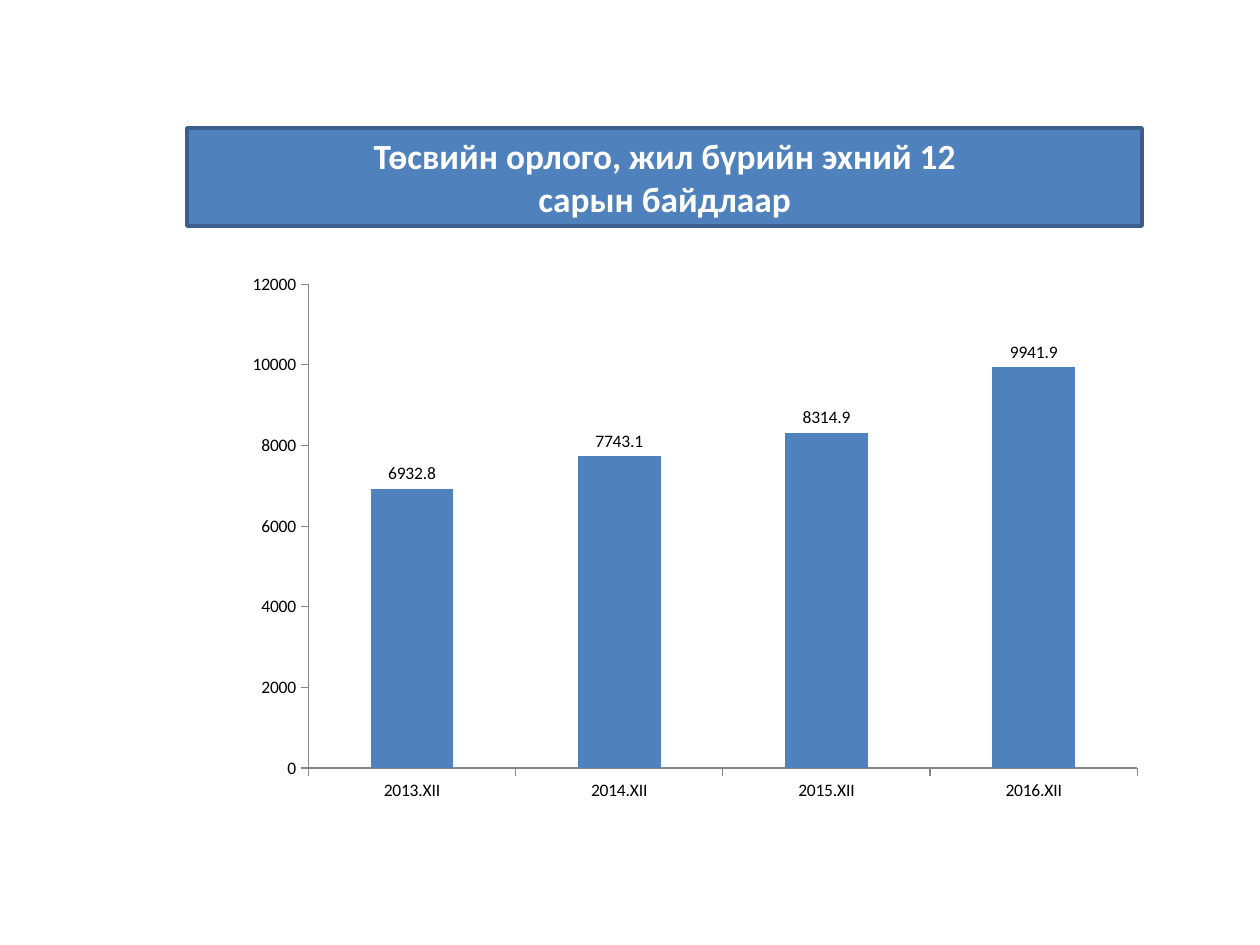
from lxml.etree import SubElement
from pptx import Presentation
from pptx.chart.data import CategoryChartData
from pptx.dml.color import RGBColor
from pptx.enum.chart import XL_CHART_TYPE, XL_LABEL_POSITION, XL_TICK_MARK
from pptx.enum.text import MSO_ANCHOR, PP_ALIGN
from pptx.oxml.ns import qn
from pptx.util import Emu, Pt

PIXEL = 914400 / 126
FONT = "Calibri"
BLUE = "4F81BD"
TITLE_LINES = ["Төсвийн орлого, жил бүрийн эхний 12", "сарын байдлаар"]
REVENUE = {"2013.XII": 6932.8, "2014.XII": 7743.1,
           "2015.XII": 8314.9, "2016.XII": 9941.9}
PLOT_LAYOUT = {"layoutTarget": "inner", "xMode": "edge", "yMode": "edge",
               "x": 0.12, "y": 0.05, "w": 0.87, "h": 0.8}


def px(length):
    return Emu(round(length * PIXEL))


def color(hex_value):
    return RGBColor.from_string(hex_value)


def set_values(target, values):
    for name, value in values.items():
        setattr(target, name, value)


def set_font(font, size, hex_value, bold=False):
    set_values(font, {"name": FONT, "size": Pt(size), "bold": bold})
    font.color.rgb = color(hex_value)


def fill_solid(fill, hex_value):
    fill.solid()
    fill.fore_color.rgb = color(hex_value)


def format_title(title, left, top, width, height):
    set_values(title, {"left": px(left), "top": px(top),
                       "width": px(width), "height": px(height)})
    fill_solid(title.fill, BLUE)
    title.line.color.rgb = color("3A5F8C")
    title.line.width = Pt(2)
    frame = title.text_frame
    frame.text = "\n".join(TITLE_LINES)
    set_values(frame, {"word_wrap": True, "vertical_anchor": MSO_ANCHOR.MIDDLE,
                       "margin_top": 0, "margin_bottom": 0})
    for para in frame.paragraphs:
        set_values(para, {"alignment": PP_ALIGN.CENTER, "line_spacing": 1.0,
                          "space_before": Pt(0)})
        for span in para.runs:
            set_font(span.font, 20.2, "FFFFFF", bold=True)


def format_axis(axis):
    set_values(axis, {"has_major_gridlines": False,
                      "major_tick_mark": XL_TICK_MARK.OUTSIDE,
                      "minor_tick_mark": XL_TICK_MARK.NONE})
    axis.format.line.color.rgb = color("868686")
    axis.format.line.width = Pt(0.75)


def place_plot(chart):
    plot_area = chart.plots[0]._element.getparent()
    layout = plot_area.find(qn("c:layout"))
    if layout is None:
        layout = SubElement(plot_area, qn("c:layout"))
        plot_area.insert(0, layout)
    manual = SubElement(layout, qn("c:manualLayout"))
    for name, value in PLOT_LAYOUT.items():
        SubElement(manual, qn(f"c:{name}")).set("val", str(value))


def add_column_chart(slide, left, top, width, height):
    data = CategoryChartData()
    data.categories = list(REVENUE)
    data.add_series("Series 1", list(REVENUE.values()))
    chart = slide.shapes.add_chart(
        XL_CHART_TYPE.COLUMN_CLUSTERED,
        px(left), px(top), px(width), px(height), data).chart
    set_values(chart, {"has_legend": False, "has_title": False})
    set_font(chart.font, 10, "000000")

    # Axes
    format_axis(chart.category_axis)
    format_axis(chart.value_axis)
    set_values(chart.value_axis, {"minimum_scale": 0, "maximum_scale": 12000,
                                  "major_unit": 2000})

    # Columns and value labels
    plot = chart.plots[0]
    set_values(plot, {"gap_width": 150, "vary_by_categories": False})
    series = plot.series[0]
    fill_solid(series.format.fill, BLUE)
    labels = series.data_labels
    set_values(labels, {"show_value": True,
                        "position": XL_LABEL_POSITION.OUTSIDE_END})
    set_font(labels.font, 10, "000000")
    place_plot(chart)


def main():
    deck = Presentation()
    set_values(deck, {"slide_width": px(1260), "slide_height": px(945)})
    slide = deck.slides.add_slide(deck.slide_layouts[5])
    format_title(slide.shapes.title, 187, 128, 955, 98)
    add_column_chart(slide, 194, 254, 953, 605)
    deck.save("out.pptx")


if __name__ == "__main__":
    main()
